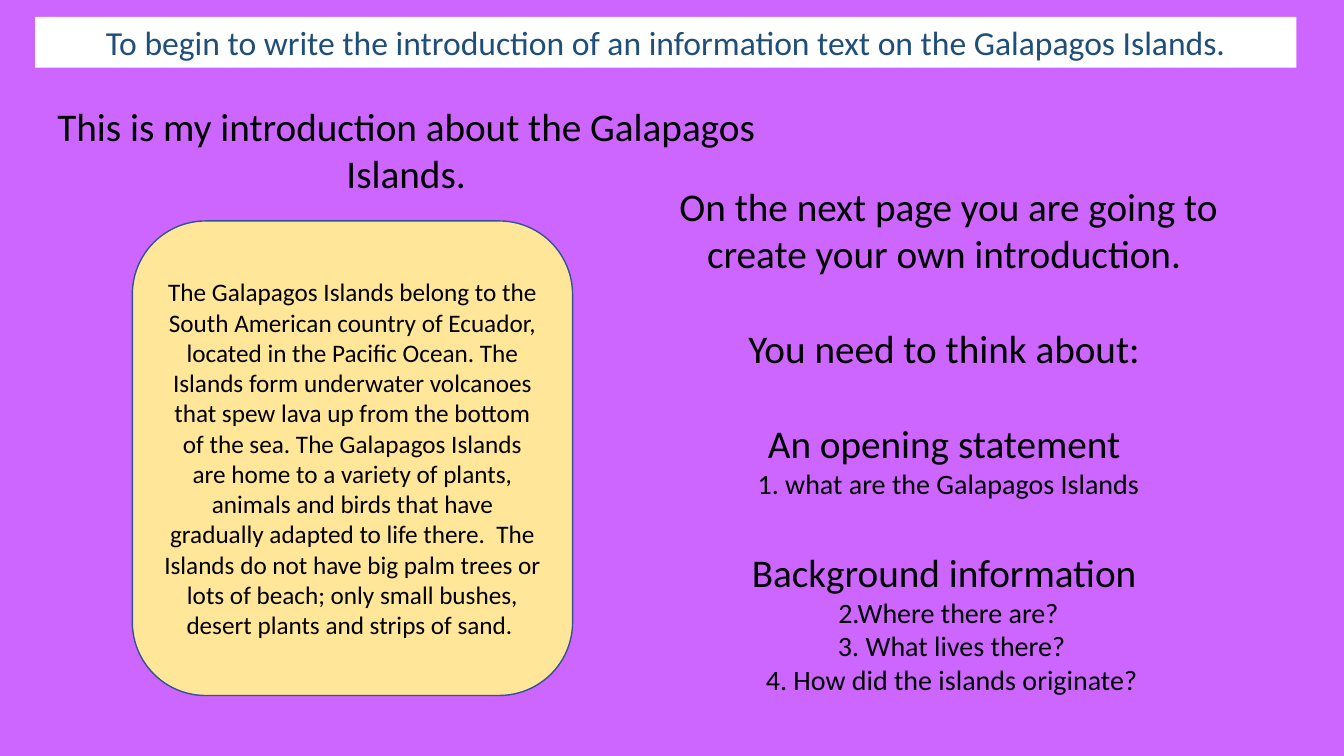
from pptx import Presentation
from pptx import util as u
from pptx.dml.color import RGBColor
from pptx.enum import shapes, text

THEME = {
    "font": "Calibri",
    "background": "CC66FF",
    "banner": "FFFFFF",
    "banner_text": "1F4E79",
    "card": "FFE699",
    "card_line": "325491",
    "ink": "000000",
    "heading": 28,
    "title": 24,
    "point": 20,
    "body": 18,
}
BLANK_LINE = 34.2  # height of one line of heading text


def colour(name):
    return RGBColor.from_string(THEME[name])


def write(paragraph, words, size="heading", ink="ink", before=0):
    paragraph.alignment = text.PP_ALIGN.CENTER
    paragraph.space_before = u.Pt(before)
    run = paragraph.add_run()
    run.text = words
    run.font.name = THEME["font"]
    run.font.size = u.Pt(THEME[size])
    run.font.color.rgb = colour(ink)


presentation = Presentation()
presentation.slide_width = u.Pt(960)
presentation.slide_height = u.Pt(540)
slide = presentation.slides.add_slide(presentation.slide_layouts[6])
slide.background.fill.solid()
slide.background.fill.fore_color.rgb = colour("background")

# Card with the sample introduction
card = slide.shapes.add_shape(
    shapes.MSO_SHAPE.ROUNDED_RECTANGLE, u.Pt(94.5), u.Pt(157.8), u.Pt(314.5), u.Pt(339))
card.fill.solid()
card.fill.fore_color.rgb = colour("card")
card.line.color.rgb = colour("card_line")
card.line.width = u.Pt(1)
write(card.text_frame.paragraphs[0],
      "The Galapagos Islands belong to the South American country of Ecuador, "
      "located in the Pacific Ocean. The Islands form underwater volcanoes that "
      "spew lava up from the bottom of the sea. The Galapagos Islands are home to "
      "a variety of plants, animals and birds that have gradually adapted to life "
      "there.  The Islands do not have big palm trees or lots of beach; only small "
      "bushes, desert plants and strips of sand. ", size="body")

# Banner with the learning objective
banner = slide.shapes.add_shape(
    shapes.MSO_SHAPE.RECTANGLE, u.Pt(25), u.Pt(12), u.Pt(901), u.Pt(36.3))
banner.fill.solid()
banner.fill.fore_color.rgb = colour("banner")
banner.line.fill.background()
write(banner.text_frame.paragraphs[0],
      "To begin to write the introduction of an information text on the Galapagos Islands.",
      size="title", ink="banner_text")

for shape in (card, banner):
    shape.shadow.inherit = False
    shape.text_frame.word_wrap = True
    shape.text_frame.vertical_anchor = text.MSO_ANCHOR.MIDDLE

# Heading above the card
heading = slide.shapes.add_textbox(u.Pt(21.6), u.Pt(69.3), u.Pt(537), u.Pt(108.6))
heading.text_frame.word_wrap = True
write(heading.text_frame.paragraphs[0], "This is my introduction about the Galapagos Islands.")

# Instructions: words, size, space before
instructions = [
    ("On the next page you are going to create your own introduction. ", "heading", 0),
    ("You need to think about: ", "heading", BLANK_LINE),
    ("An opening statement ", "heading", BLANK_LINE),
    ("1. what are the Galapagos Islands", "point", 0),
    ("Background information ", "heading", BLANK_LINE),
    ("2.Where there are?", "point", 0),
    (" 3. What lives there?", "point", 0),
    (" 4. How did the islands originate?", "point", 0),
]
guide = slide.shapes.add_textbox(u.Pt(442), u.Pt(126.7), u.Pt(471), u.Pt(409.7))
guide.text_frame.word_wrap = True
for index, (words, size, before) in enumerate(instructions):
    frame = guide.text_frame
    paragraph = frame.add_paragraph() if index else frame.paragraphs[0]
    write(paragraph, words, size=size, before=before)

presentation.save("out.pptx")
